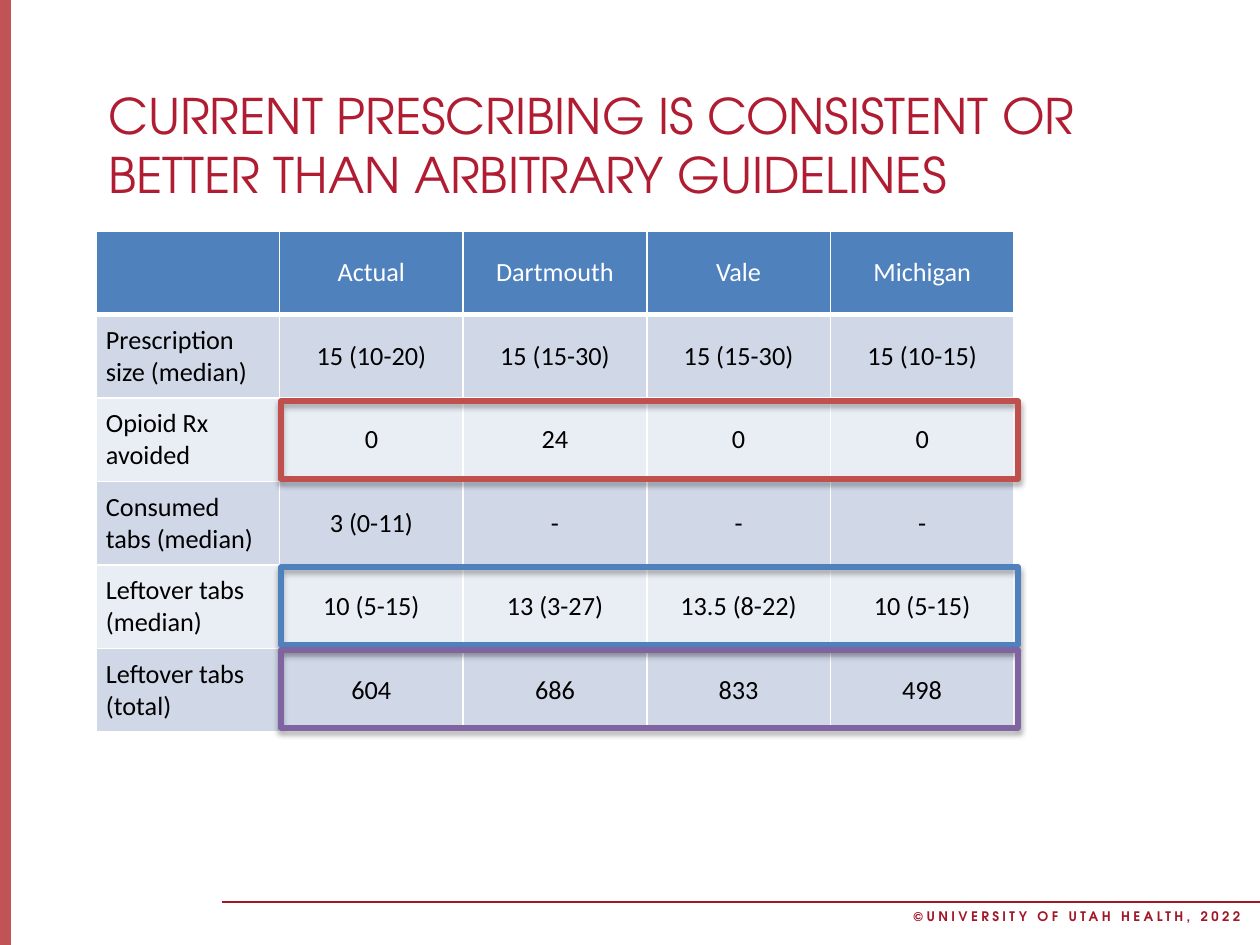
from lxml import etree
from pptx import Presentation
from pptx.dml.color import RGBColor
from pptx.enum.shapes import MSO_CONNECTOR, MSO_SHAPE
from pptx.enum.text import MSO_ANCHOR, PP_ALIGN
from pptx.oxml.ns import qn
from pptx.util import Pt

EMU_PER_PX = 914400 / 126
RECTANGLE = MSO_SHAPE.RECTANGLE
STRAIGHT = MSO_CONNECTOR.STRAIGHT
MIDDLE = MSO_ANCHOR.MIDDLE
LEFT, CENTER = PP_ALIGN.LEFT, PP_ALIGN.CENTER

TITLE_FONT = "TeX Gyre Adventor"
TABLE_FONT = "Calibri"
CRIMSON = "A21727"
WHITE = "FFFFFF"
HEADER_FILL = "4F81BD"
BAND_FILLS = ["D0D8E8", "E9EDF4"]

GUIDELINE_ROWS = [
    ["", "Actual", "Dartmouth", "Vale", "Michigan"],
    ["Prescription size (median)", "15 (10-20)", "15 (15-30)", "15 (15-30)", "15 (10-15)"],
    ["Opioid Rx avoided", "0", "24", "0", "0"],
    ["Consumed tabs (median)", "3 (0-11)", "-", "-", "-"],
    ["Leftover tabs\n(median)", "10 (5-15)", "13 (3-27)", "13.5 (8-22)", "10 (5-15)"],
    ["Leftover tabs (total)", "604", "686", "833", "498"],
]
HIGHLIGHTS = [(401, "C0504D"), (567, "4F81BD"), (650, "8064A2")]


def px(length):
    return round(length * EMU_PER_PX)


def rgb(color):
    return RGBColor.from_string(color)


def child(parent, tag, **attributes):
    element = etree.SubElement(parent, qn(tag))
    for name, value in attributes.items():
        element.set(name, str(value))
    return element


def set_font(paragraph, name, size, color, bold=False):
    font = paragraph.font
    font.name = name
    font.size = Pt(size)
    font.bold = bold
    font.color.rgb = rgb(color)


def add_text(slide, box, text, size, color, bold=False, spacing=0):
    frame = slide.shapes.add_textbox(*map(px, box)).text_frame
    frame.word_wrap = True
    paragraph = frame.paragraphs[0]
    run = paragraph.add_run()
    run.text = text
    set_font(paragraph, TITLE_FONT, size, color, bold)
    if spacing:
        run.font._element.set("spc", str(spacing))


def add_side_bar(slide):
    bar = slide.shapes.add_shape(RECTANGLE, 0, 0, px(11), px(945))
    bar.shadow.inherit = False
    bar.line.fill.background()
    bar.fill.solid()
    bar.fill.fore_color.rgb = rgb("AF282C")
    fill_color = bar._element.spPr.find(f"{qn('a:solidFill')}/{qn('a:srgbClr')}")
    child(fill_color, "a:alpha", val=80000)


def add_footer_rule(slide):
    rule = slide.shapes.add_connector(STRAIGHT, px(222), px(902), px(1260), px(902))
    rule.line.color.rgb = rgb(CRIMSON)
    rule.line.width = Pt(1)
    child(rule._element.spPr, "a:effectLst")


def set_borders(cell, bottom_width):
    properties = cell._tc.get_or_add_tcPr()
    widths = {"a:lnL": 1, "a:lnR": 1, "a:lnT": 1, "a:lnB": bottom_width}
    for position, (tag, width) in enumerate(widths.items()):
        border = child(properties, tag, w=Pt(width))
        child(child(border, "a:solidFill"), "a:srgbClr", val=WHITE)
        properties.insert(position, border)


def fill_cell(cell, text, row, column):
    is_header = row == 0
    cell.text = text
    cell.vertical_anchor = MIDDLE
    cell.margin_left = cell.margin_right = px(10)
    cell.margin_top = cell.margin_bottom = px(5)
    cell.fill.solid()
    cell.fill.fore_color.rgb = rgb(HEADER_FILL if is_header else BAND_FILLS[(row - 1) % 2])
    set_borders(cell, 3 if is_header else 1)
    for paragraph in cell.text_frame.paragraphs:
        paragraph.alignment = CENTER if column else LEFT
        set_font(paragraph, TABLE_FONT, 15, WHITE if is_header else "000000")


def add_guideline_table(slide):
    row_count, column_count = len(GUIDELINE_ROWS), len(GUIDELINE_ROWS[0])
    table = slide.shapes.add_table(
        row_count, column_count, px(96), px(231), px(918), px(501)
    ).table
    for row, texts in enumerate(GUIDELINE_ROWS):
        for column, text in enumerate(texts):
            fill_cell(table.cell(row, column), text, row, column)


def add_highlight(slide, top, color):
    frame = slide.shapes.add_shape(RECTANGLE, px(281), px(top), px(737), px(78))
    frame.fill.background()
    frame.line.color.rgb = rgb(color)
    frame.line.width = Pt(3)
    frame.shadow.inherit = False
    effects = frame._element.spPr.find(qn("a:effectLst"))
    shadow = child(effects, "a:outerShdw", blurRad=Pt(3.1), dist=Pt(1.8),
                   dir=5400000, rotWithShape=0)
    child(child(shadow, "a:srgbClr", val="000000"), "a:alpha", val=35000)


def main():
    presentation = Presentation()
    presentation.slide_width = px(1260)
    presentation.slide_height = px(945)
    slide = presentation.slides.add_slide(presentation.slide_layouts[6])

    add_side_bar(slide)
    add_footer_rule(slide)
    add_text(slide, (901, 902, 359, 29), "©UNIVERSITY OF UTAH HEALTH, 2022",
             7.5, CRIMSON, bold=True, spacing=190)
    add_guideline_table(slide)
    for top, color in HIGHLIGHTS:
        add_highlight(slide, top, color)
    add_text(slide, (96, 79, 1101, 76),
             "CURRENT PRESCRIBING IS CONSISTENT OR BETTER THAN ARBITRARY GUIDELINES",
             28, "B01C32")

    presentation.save("out.pptx")


if __name__ == "__main__":
    main()
